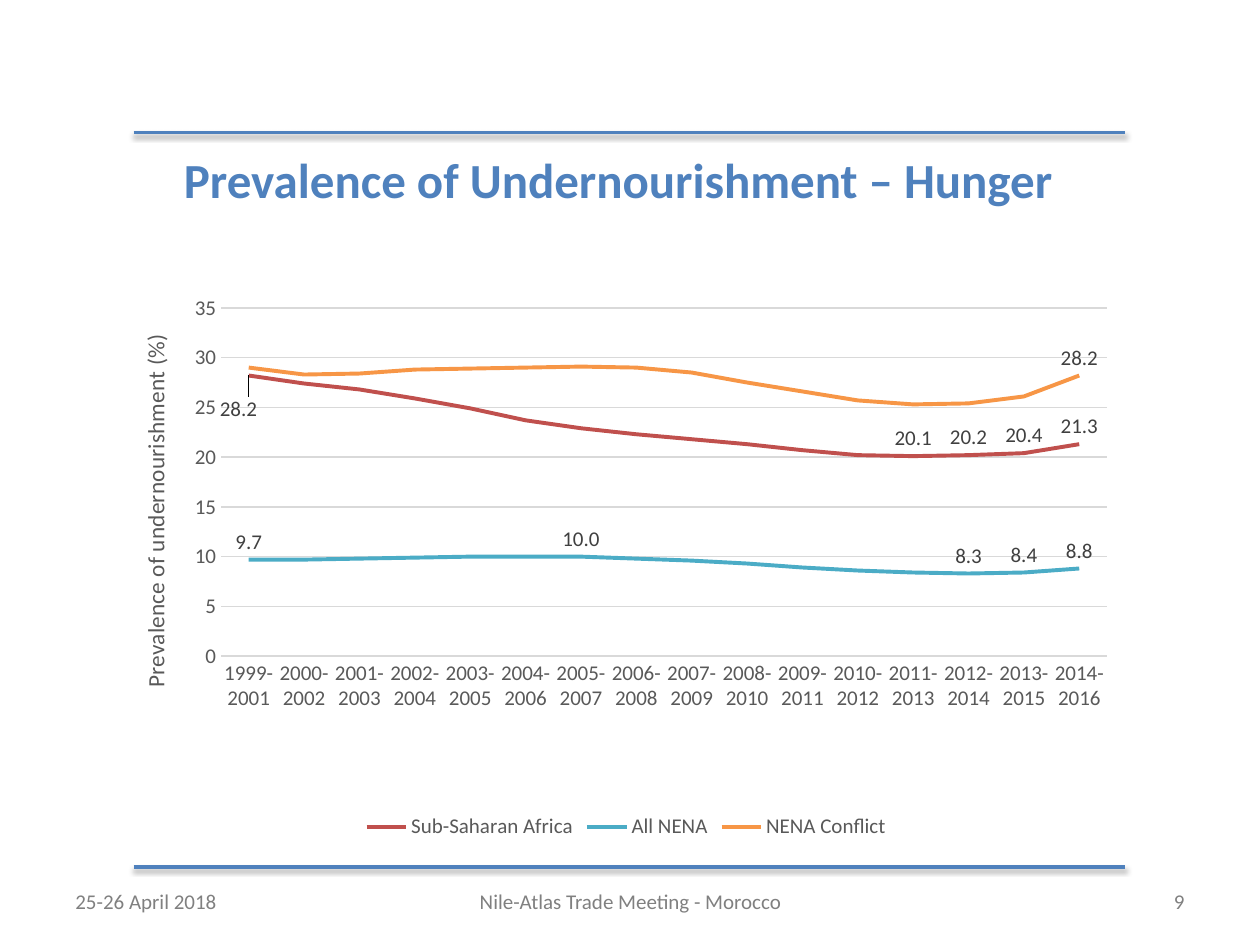
from lxml.etree import SubElement
from pptx import Presentation
from pptx.chart.data import CategoryChartData
from pptx.dml.color import RGBColor
from pptx.enum.chart import XL_CHART_TYPE as ChartType
from pptx.enum.chart import XL_LABEL_POSITION as LabelPosition
from pptx.enum.chart import XL_LEGEND_POSITION as LegendPosition
from pptx.enum.chart import XL_MARKER_STYLE as MarkerStyle
from pptx.enum.chart import XL_TICK_MARK as TickMark
from pptx.enum.shapes import MSO_CONNECTOR as Connector
from pptx.enum.text import MSO_ANCHOR as Anchor
from pptx.enum.text import PP_ALIGN as Align
from pptx.oxml import parse_xml
from pptx.oxml.ns import nsdecls, qn
from pptx.util import Inches, Pt

BLUE = RGBColor(0x4F, 0x81, 0xBD)
RED = RGBColor(0xC0, 0x50, 0x4D)
TEAL = RGBColor(0x4B, 0xAC, 0xC6)
ORANGE = RGBColor(0xF7, 0x96, 0x46)
GRID_GRAY = RGBColor(0xD9, 0xD9, 0xD9)
AXIS_GRAY = RGBColor(0x59, 0x59, 0x59)
LABEL_GRAY = RGBColor(0x40, 0x40, 0x40)
FOOTER_GRAY = RGBColor(0x80, 0x80, 0x80)
FONT = "Calibri"

TITLE = "Prevalence of Undernourishment – Hunger"
AXIS_TITLE = "Prevalence of undernourishment (%)"
PERIODS = [f"{year}-{year + 2}" for year in range(1999, 2015)]
SERIES = [
    ("Sub-Saharan Africa", RED, (0, 12, 13, 14, 15),
     (28.2, 27.4, 26.8, 25.9, 24.9, 23.7, 22.9, 22.3,
      21.8, 21.3, 20.7, 20.2, 20.1, 20.2, 20.4, 21.3)),
    ("All NENA", TEAL, (0, 6, 13, 14, 15),
     (9.7, 9.7, 9.8, 9.9, 10, 10, 10, 9.8,
      9.6, 9.3, 8.9, 8.6, 8.4, 8.3, 8.4, 8.8)),
    ("NENA Conflict", ORANGE, (15,),
     (29, 28.3, 28.4, 28.8, 28.9, 29, 29.1, 29,
      28.5, 27.5, 26.6, 25.7, 25.3, 25.4, 26.1, 28.2)),
]
RULE_TOPS = (1.05, 6.88)
RULE_ENDS = (1.06, 8.93)
FOOTERS = [
    ("25-26 April 2018", 0.5, 2.33, Align.LEFT),
    ("Nile-Atlas Trade Meeting - Morocco", 3.42, 3.17, Align.CENTER),
    ("9", 7.17, 2.33, Align.RIGHT),
]


def style_font(font, size, color, bold=False):
    """Apply the slide's typeface with a size, colour and weight."""
    font.name, font.size, font.bold = FONT, Pt(size), bold
    font.color.rgb = color


def make_layout(**settings):
    """Return a manual chart layout with the given settings."""
    layout = parse_xml(f"<c:layout {nsdecls('c')}><c:manualLayout/></c:layout>")
    for name, value in settings.items():
        SubElement(layout[0], qn(f"c:{name}")).set("val", str(value))
    return layout


def add_rule(slide, top):
    """Add a horizontal rule with a soft shadow."""
    left, right = map(Inches, RULE_ENDS)
    rule = slide.shapes.add_connector(Connector.STRAIGHT, left, Inches(top), right, Inches(top))
    rule.line.color.rgb = BLUE
    rule.line.width = Pt(2)
    rule._element.spPr.append(parse_xml(
        f'<a:effectLst {nsdecls("a")}><a:outerShdw blurRad="{Pt(3.1)}" dist="{Pt(1.6)}" '
        'dir="5400000" rotWithShape="0"><a:srgbClr val="000000"><a:alpha val="38000"/>'
        '</a:srgbClr></a:outerShdw></a:effectLst>'))


def add_title(slide):
    """Fill and place the title placeholder."""
    title = slide.shapes.title
    title.left, title.top = Inches(0.5), Inches(1.02)
    title.width, title.height = Inches(8.81), Inches(0.8)
    title.text_frame.text = TITLE
    title.text_frame.vertical_anchor = Anchor.MIDDLE
    paragraph = title.text_frame.paragraphs[0]
    paragraph.alignment = Align.CENTER
    style_font(paragraph.runs[0].font, 28, BLUE, bold=True)


def add_footer(slide, text, left, width, alignment):
    """Add one footer entry."""
    box = slide.shapes.add_textbox(Inches(left), Inches(6.95), Inches(width), Inches(0.4))
    frame = box.text_frame
    frame.word_wrap = True
    frame.vertical_anchor = Anchor.MIDDLE
    frame.text = text
    frame.paragraphs[0].alignment = alignment
    style_font(frame.paragraphs[0].runs[0].font, 12, FOOTER_GRAY)


def style_axes(chart):
    """Format both axes, the gridlines and the value axis title."""
    for axis in (chart.category_axis, chart.value_axis):
        axis.major_tick_mark = axis.minor_tick_mark = TickMark.NONE
        style_font(axis.tick_labels.font, 12, AXIS_GRAY)
    line = chart.category_axis.format.line
    line.color.rgb, line.width = GRID_GRAY, Pt(0.75)
    axis = chart.value_axis
    axis.minimum_scale, axis.maximum_scale, axis.major_unit = 0, 35, 5
    axis.tick_labels.number_format = "0"
    axis.tick_labels.number_format_is_linked = False
    axis.format.line.fill.background()
    grid = axis.major_gridlines.format.line
    grid.color.rgb, grid.width = GRID_GRAY, Pt(0.75)
    frame = axis.axis_title.text_frame
    frame.text = AXIS_TITLE
    style_font(frame.paragraphs[0].runs[0].font, 13.3, AXIS_GRAY)
    title = axis.axis_title._element
    for layout in title.findall(qn("c:layout")):
        title.remove(layout)
    title.find(qn("c:tx")).addnext(make_layout(xMode="edge", yMode="edge", x=0.02, y=0.09))


def style_series(series, color, labelled):
    """Colour a plain line and label its chosen points without leader lines."""
    series.smooth = False
    series.format.line.color.rgb = color
    series.format.line.width = Pt(2.25)
    series.marker.style = MarkerStyle.NONE
    series.data_labels.show_value = False
    for index in labelled:
        label = series.points[index].data_label
        style_font(label.font, 12, LABEL_GRAY)
        label.position = LabelPosition.ABOVE
    series.data_labels._element.append(parse_xml(
        f'<c:extLst {nsdecls("c")}><c:ext uri="{{CE6537A1-D6FC-4f65-9D91-7224C49458BB}}" '
        'xmlns:c15="http://schemas.microsoft.com/office/drawing/2012/chart">'
        '<c15:showLeaderLines val="0"/></c:ext></c:extLst>'))


def add_chart(slide):
    """Add the line chart of undernourishment by region."""
    data = CategoryChartData(number_format="0.0")
    data.categories = PERIODS
    for name, _, _, values in SERIES:
        data.add_series(name, values)
    chart = slide.shapes.add_chart(
        ChartType.LINE, Inches(0.91), Inches(2.22), Inches(8.12), Inches(4.48), data).chart
    chart.has_title = False
    chart.font.name, chart.font.size = FONT, Pt(10)
    chart.has_legend = True
    chart.legend.position = LegendPosition.BOTTOM
    chart.legend.include_in_layout = False
    style_font(chart.legend.font, 12, AXIS_GRAY)
    plot = chart.plots[0]
    plot.vary_by_categories = False
    style_axes(chart)
    for series, (_, color, labelled, _) in zip(plot.series, SERIES):
        style_series(series, color, labelled)
    first_label = chart._chartSpace.xpath(".//c:dLbl/c:idx")[0]
    first_label.addnext(make_layout(x=-0.01, y=0.09))
    plot_area = chart._chartSpace.chart.plotArea
    for layout in plot_area.findall(qn("c:layout")):
        plot_area.remove(layout)
    plot_area.insert(0, make_layout(layoutTarget="inner", xMode="edge", yMode="edge",
                                    x=0.104, y=0.05, w=0.866, h=0.617))


def main():
    """Build the slide and save it."""
    presentation = Presentation()
    presentation.slide_width, presentation.slide_height = Inches(10), Inches(7.5)
    slide = presentation.slides.add_slide(presentation.slide_layouts[5])
    for top in RULE_TOPS:
        add_rule(slide, top)
    add_title(slide)
    add_chart(slide)
    for footer in FOOTERS:
        add_footer(slide, *footer)
    presentation.save("out.pptx")


if __name__ == "__main__":
    main()
